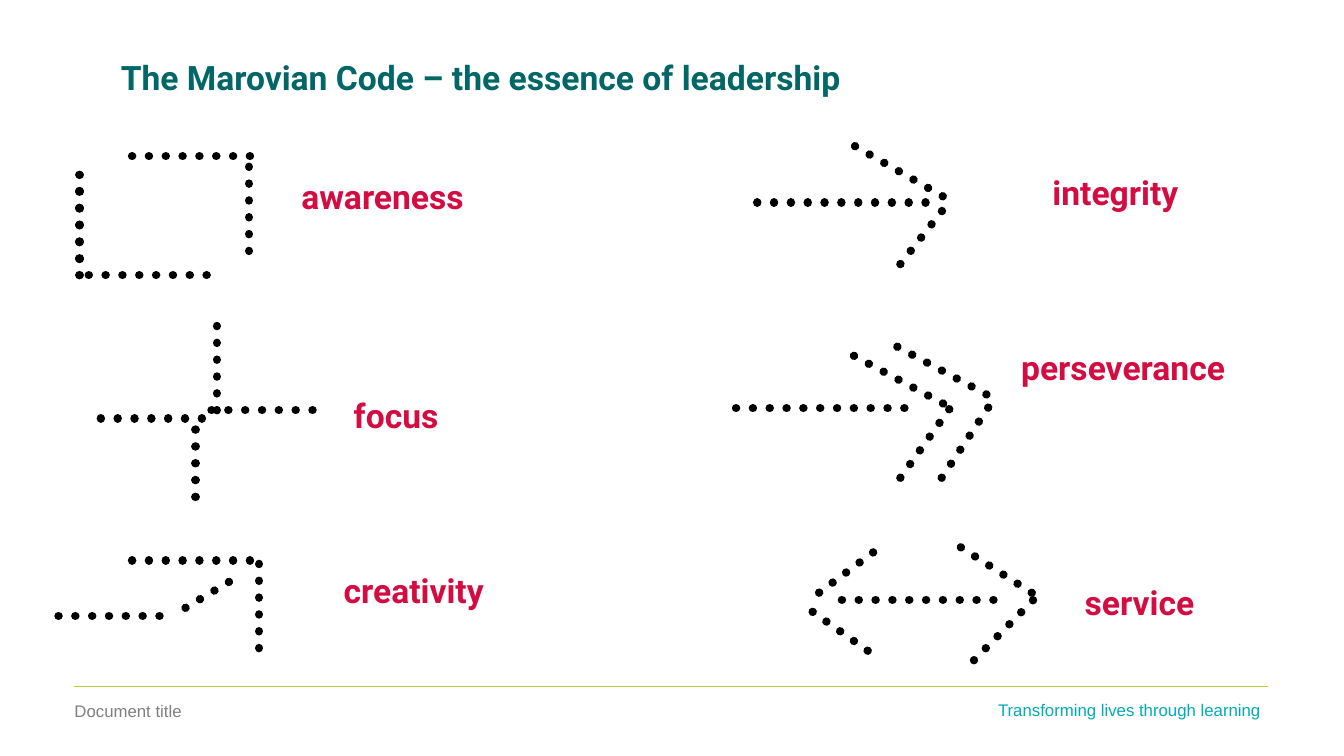
from lxml import etree
from pptx import Presentation
from pptx.dml.color import RGBColor
from pptx.enum.dml import MSO_LINE
from pptx.enum.shapes import MSO_CONNECTOR
from pptx.oxml.ns import qn
from pptx.util import Inches, Pt

STRAIGHT = MSO_CONNECTOR.STRAIGHT
ROUND_DOT = MSO_LINE.ROUND_DOT

WIDTH, HEIGHT = 13.33, 7.5
BLACK, LIME, GREY, TEAL = "000000", "B3D236", "808080", "00ABB5"
GREEN, CRIMSON = "006666", "D30D41"

TITLE = ("The Marovian Code – the essence of leadership", 1.1, 0.52, 11.23)
FOOTERS = [
    ("Document title", 0.64, 6.9, GREY),
    ("Transforming lives through learning", 9.8, 6.89, TEAL),
]
FOOTER_RULE = (0.73, 6.81, 12.58, 6.81)

VALUES = [
    ("awareness", (2.89, 1.7, 3.04), [
        (1.31, 1.55, 2.57, 1.55),
        (2.47, 2.49, 2.47, 1.55),
        (0.79, 2.57, 0.79, 1.63),
        (0.79, 2.73, 0.79, 1.79),
        (2.05, 2.73, 0.79, 2.73),
    ]),
    ("focus", (3.41, 3.87, 2.31), [
        (2.15, 4.07, 2.15, 3.12),
        (3.1, 4.07, 2.05, 4.07),
        (1, 4.15, 2.05, 4.15),
        (1.94, 4.93, 1.94, 4.15),
    ]),
    ("creativity", (3.31, 5.6, 2.62), [
        (1.31, 5.56, 2.57, 5.56),
        (2.57, 6.43, 2.57, 5.48),
        (1.84, 6.03, 2.36, 5.72),
        (0.58, 6.11, 1.73, 6.11),
    ]),
    ("integrity", (10.34, 1.66, 2.31), [
        (8.48, 1.45, 9.46, 2.01),
        (8.93, 2.62, 9.44, 1.97),
        (7.51, 2.01, 9.29, 2.01),
    ]),
    ("perseverance", (10.03, 3.39, 3.3), [
        (8.47, 3.53, 9.46, 4.06),
        (8.93, 4.74, 9.45, 4.01),
        (7.3, 4.05, 9.08, 4.05),
        (8.9, 3.44, 9.89, 3.97),
        (9.34, 4.74, 9.87, 3.94),
    ]),
    ("service", (10.66, 5.72, 2.31), [
        (9.53, 5.43, 10.31, 5.93),
        (9.66, 6.55, 10.28, 5.92),
        (8.35, 5.95, 9.92, 5.95),
        (8.66, 5.48, 8.03, 5.95),
        (8.06, 6.07, 8.74, 6.55),
    ]),
]


def color(value):
    return RGBColor.from_string(value)


def add_line(page, ends, value, width, dotted=False):
    line = page.shapes.add_connector(STRAIGHT, *(Inches(end) for end in ends))
    line.line.color.rgb = color(value)
    line.line.width = Pt(width)
    if dotted:
        line.line.dash_style = ROUND_DOT
        line._element.spPr.find(qn("a:ln")).set("cap", "rnd")
    etree.SubElement(line._element.spPr, qn("a:effectLst"))


def add_text(page, text, place, font, size, value, bold=False):
    box = page.shapes.add_textbox(*(Inches(length) for length in place))
    box.text_frame.word_wrap = True
    para = box.text_frame.paragraphs[0]
    para.text = text
    para.font.name = font
    para.font.size = Pt(size)
    para.font.bold = bold
    para.font.color.rgb = color(value)


def add_heading(page, text, place, value):
    add_text(page, text, (*place, 0.5), "Roboto", 24, value, True)


def main():
    deck = Presentation()
    deck.slide_width, deck.slide_height = Inches(WIDTH), Inches(HEIGHT)
    page = deck.slides.add_slide(deck.slide_layouts[6])

    add_line(page, FOOTER_RULE, LIME, 0.75)
    for text, left, top, value in FOOTERS:
        add_text(page, text, (left, top, 3.01, 0.3), "Arial", 12, value)

    for name, place, strokes in VALUES:
        for stroke in strokes:
            add_line(page, stroke, BLACK, 6, dotted=True)
        add_heading(page, name, place, CRIMSON)

    add_heading(page, TITLE[0], TITLE[1:], GREEN)
    deck.save("out.pptx")


if __name__ == "__main__":
    main()
